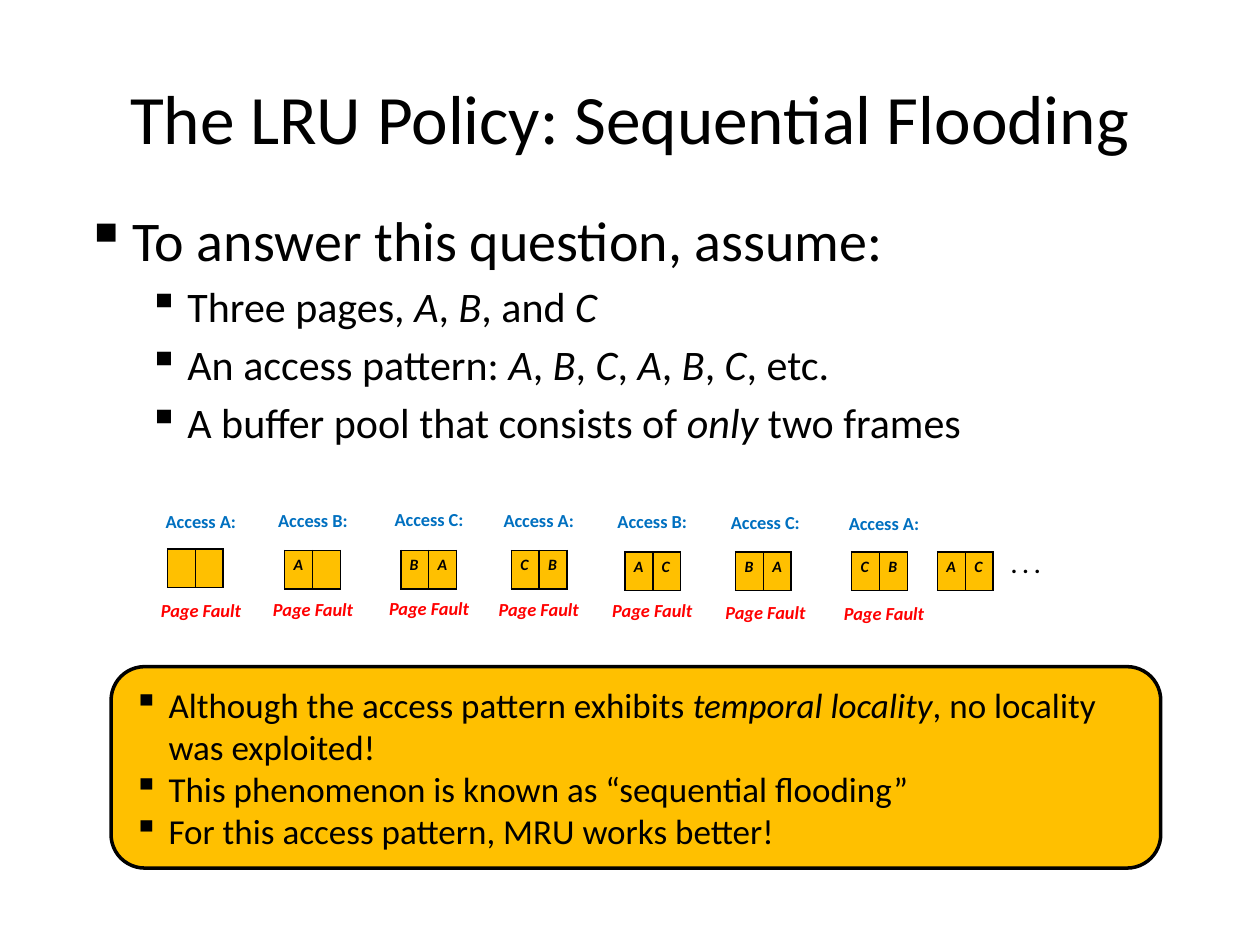
from dataclasses import dataclass

import pptx
import pptx.dml.color
import pptx.enum.shapes
import pptx.enum.text
import pptx.oxml
import pptx.oxml.ns
import pptx.util
from pptx.util import Cm

FONT = "Calibri"
COLORS = {"ink": "000000", "gold": "FFC000", "access": "0070C0", "fault": "FF0000"}
CELL_WIDTH, ROW_HEIGHT = 0.56, 0.77


@dataclass
class Frames:
    """Buffer pool with its pages, newest first; lengths in cm."""
    left: float
    top: float
    pages: str


@dataclass
class Access:
    left: float
    top: float
    page: str


@dataclass
class Bullet:
    """Text with italic parts between asterisks; lengths in cm, sizes in points."""
    text: str
    size: float
    margin: float
    hanging: float
    before: float = 0


POOLS = [
    Frames(3.38, 11.07, "  "),
    Frames(5.74, 11.1, "A "),
    Frames(8.08, 11.1, "BA"),
    Frames(10.31, 11.1, "CB"),
    Frames(12.6, 11.13, "AC"),
    Frames(14.83, 11.13, "BA"),
    Frames(17.17, 11.13, "CB"),
    Frames(18.9, 11.13, "AC"),
]
ACCESSES = [
    Access(2.97, 10.16, "A"),
    Access(5.23, 10.13, "B"),
    Access(7.57, 10.11, "C"),
    Access(9.78, 10.13, "A"),
    Access(12.07, 10.16, "B"),
    Access(14.35, 10.19, "C"),
    Access(16.74, 10.21, "A"),
]
ASSUMPTIONS = [Bullet("To answer this question, assume:", 32, 0.95, 0.95, 6.4)] + [
    Bullet(text, 24, 2.06, 0.79, 4.5)
    for text in (
        "Three pages, *A*, *B*, and *C*",
        "An access pattern: *A*, *B*, *C*, *A*, *B*, *C*, etc.",
        "A buffer pool that consists of *only* two frames",
    )
]
CONCLUSIONS = [
    Bullet(text, 20, 0.71, 0.71)
    for text in (
        "Although the access pattern exhibits *temporal locality*, no locality was exploited!",
        "This phenomenon is known as “sequential flooding”",
        "For this access pattern, MRU works better!",
    )
]


def rgb(name: str) -> pptx.dml.color.RGBColor:
    return pptx.dml.color.RGBColor.from_string(COLORS[name])


def set_font(font, size: float, color: str = "ink", bold=False, italic=False) -> None:
    font.name, font.size = FONT, pptx.util.Pt(size)
    font.bold, font.italic = bold, italic
    font.color.rgb = rgb(color)


def write_bullets(frame, bullets: list[Bullet]) -> None:
    for index, bullet in enumerate(bullets):
        para = frame.paragraphs[0] if index == 0 else frame.add_paragraph()
        para.alignment = pptx.enum.text.PP_ALIGN.LEFT
        para.space_before = pptx.util.Pt(bullet.before)
        set_font(para.font, bullet.size)
        properties = para._p.get_or_add_pPr()
        properties.set("marL", str(Cm(bullet.margin)))
        properties.set("indent", str(-Cm(bullet.hanging)))
        mark = pptx.oxml.parse_xml(
            f'<a:buChar {pptx.oxml.ns.nsdecls("a")} char="▪"/>')
        properties.find(pptx.oxml.ns.qn("a:spcBef")).addnext(mark)
        for part, text in enumerate(bullet.text.split("*")):
            span = para.add_run()
            span.text = text
            if part % 2:
                span.font.italic = True


def add_borders(cell) -> None:
    properties = cell._tc.get_or_add_tcPr()
    for side in ("lnL", "lnR", "lnT", "lnB"):
        properties.append(pptx.oxml.parse_xml(
            f'<a:{side} {pptx.oxml.ns.nsdecls("a")} w="{pptx.util.Pt(1)}"><a:solidFill>'
            f'<a:srgbClr val="{COLORS["ink"]}"/></a:solidFill></a:{side}>'))


def draw_frames(page, pool: Frames) -> None:
    count = len(pool.pages)
    table = page.shapes.add_table(
        1, count, Cm(pool.left), Cm(pool.top),
        Cm(CELL_WIDTH * count), Cm(ROW_HEIGHT)).table
    for cell, name in zip(table.rows[0].cells, pool.pages):
        cell.margin_left = cell.margin_right = Cm(0.18)
        cell.margin_top = cell.margin_bottom = Cm(0.1)
        para = cell.text_frame.paragraphs[0]
        para.text = name.strip()
        set_font(para.font, 9, bold=True, italic=True)
        add_borders(cell)
        cell.fill.solid()
        cell.fill.fore_color.rgb = rgb("gold")


def add_label(page, left: float, top: float, width: float, height: float):
    frame = page.shapes.add_textbox(Cm(left), Cm(top), Cm(width), Cm(height)).text_frame
    frame.word_wrap = False
    frame.auto_size = pptx.enum.text.MSO_AUTO_SIZE.SHAPE_TO_FIT_TEXT
    return frame


def draw_access(page, access: Access) -> None:
    """Write the access above its frames and the page fault below them."""
    frame = add_label(page, access.left, access.top, 2.16, 2.49)
    heading, fault = frame.paragraphs[0], frame.add_paragraph()
    heading.text, fault.text = f"Access {access.page}:", "Page Fault"
    heading.alignment = fault.alignment = pptx.enum.text.PP_ALIGN.CENTER
    set_font(heading.font, 10.5, "access", bold=True)
    set_font(fault.font, 10.5, "fault", bold=True, italic=True)
    fault.space_before = pptx.util.Pt(38.4)


def draw_title(page) -> None:
    title = page.shapes.title
    title.left, title.top, title.width, title.height = Cm(1.27), Cm(0.76), Cm(22.86), Cm(3.18)
    title.text_frame.vertical_anchor = pptx.enum.text.MSO_ANCHOR.MIDDLE
    para = title.text_frame.paragraphs[0]
    para.text = "The LRU Policy: Sequential Flooding"
    para.alignment = pptx.enum.text.PP_ALIGN.CENTER
    set_font(para.font, 39.6)


def draw_conclusions(page) -> None:
    box = page.shapes.add_shape(
        pptx.enum.shapes.MSO_SHAPE.ROUNDED_RECTANGLE,
        Cm(2.24), Cm(13.44), Cm(21.16), Cm(4.06))
    box.shadow.inherit = False
    box.fill.solid()
    box.fill.fore_color.rgb = rgb("gold")
    box.line.color.rgb = rgb("ink")
    box.line.width = pptx.util.Pt(2)
    box.text_frame.vertical_anchor = pptx.enum.text.MSO_ANCHOR.MIDDLE
    write_bullets(box.text_frame, CONCLUSIONS)


def main() -> None:
    deck = pptx.Presentation()
    deck.slide_width, deck.slide_height = Cm(25.4), Cm(19.05)
    page = deck.slides.add_slide(deck.slide_layouts.get_by_name("Title Only"))
    draw_title(page)
    body = page.shapes.add_textbox(Cm(1.47), Cm(4.01), Cm(22.66), Cm(5.6)).text_frame
    body.word_wrap = True
    write_bullets(body, ASSUMPTIONS)
    for pool in POOLS:
        draw_frames(page, pool)
    for access in ACCESSES:
        draw_access(page, access)
    dots = add_label(page, 20.14, 10.97, 1.12, 0.84).paragraphs[0]
    dots.text = ". . ."
    set_font(dots.font, 13.5, bold=True, italic=True)
    draw_conclusions(page)
    deck.save("out.pptx")


if __name__ == "__main__":
    main()
